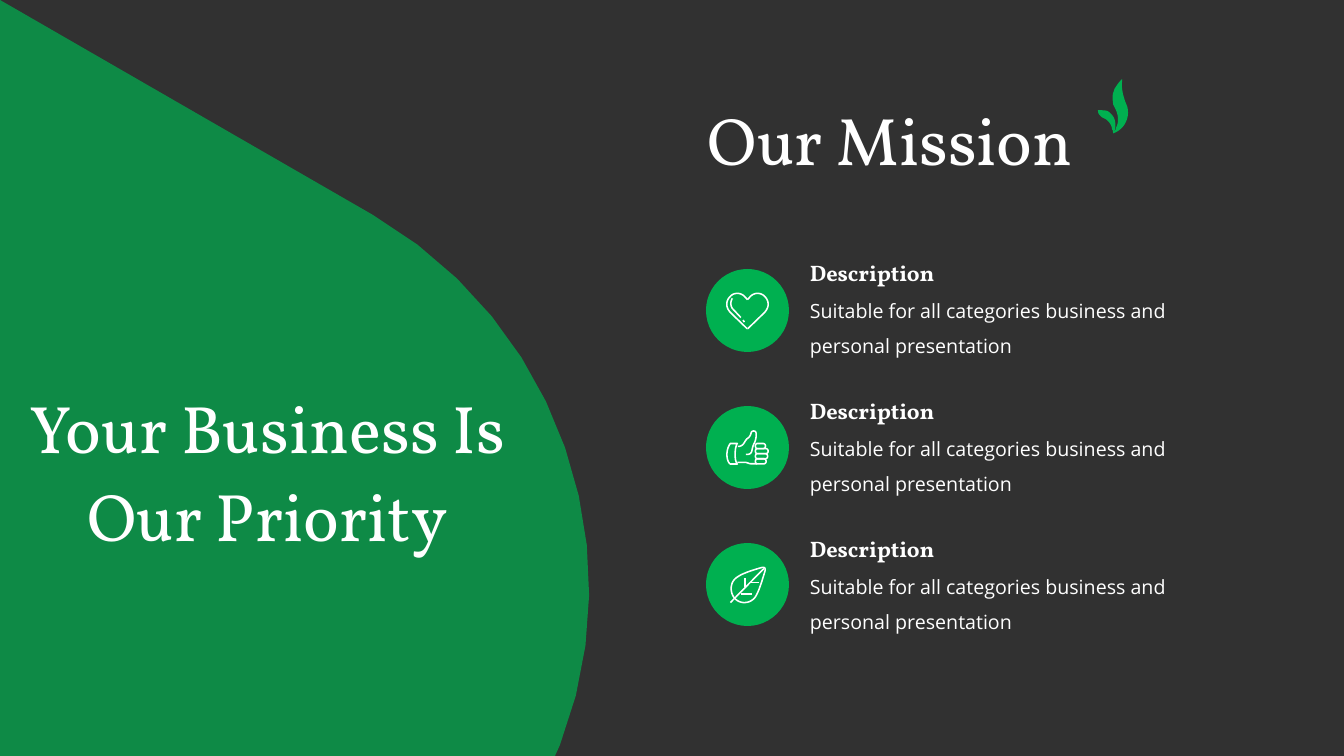
import pptx
import pptx.dml.color
import pptx.enum.shapes
import pptx.enum.text
import pptx.oxml
import pptx.oxml.ns
import pptx.util
from lxml import etree

RGBColor = pptx.dml.color.RGBColor
ALIGN = pptx.enum.text.PP_ALIGN

EMU_PER_PX = 914400 / 100.8
UNITS_PER_PX = 10  # outlines are drawn in tenths of a px
CURVE_STEPS = 12

CHARCOAL = RGBColor(0x31, 0x31, 0x31)
GREEN = RGBColor(0x00, 0xB0, 0x50)
WHITE = RGBColor(0xFF, 0xFF, 0xFF)
SERIF, SANS = "Vollkorn", "Open Sans"

HEADING = "Our Mission"
STATEMENT = "Your Business Is Our Priority"
BODY = "Suitable for all categories business and personal presentation"

# An outline is a list of contours: (closed, start point, segments).
# A segment of two numbers is a line, of six numbers a Bézier curve.
PANEL = [(True, (0, 0), [
    (0, 7560), (5550, 7560), (5600, 7450),
    (6360, 5500, 5600, 3240, 3730, 2150)])]

SPROUT = [
    (True, (0, 312), [
        (0, 350, 20, 365, 40, 383), (60, 393, 60, 393, 80, 403),
        (110, 423, 140, 464, 141, 504), (151, 514, 151, 524, 151, 544),
        (171, 514, 181, 474, 171, 423), (165, 380, 131, 343, 101, 323),
        (80, 312, 50, 312, 0, 312)]),
    (True, (242, 0), [
        (210, 30, 190, 60, 171, 91), (161, 101, 161, 121, 151, 141),
        (141, 191, 151, 222, 151, 252), (181, 312),
        (202, 363, 212, 433, 181, 484), (181, 504, 171, 514, 151, 544),
        (212, 524, 262, 474, 282, 423), (305, 370, 305, 320, 292, 272),
        (252, 181, 232, 91, 242, 20)])]

# Icons are drawn around the centre of their circle.
HEART_LEFT = [
    (-8, 181, -14, 172, -20, 166), (-166, 25),
    (-190, 0, -207, -30, -207, -61), (-207, -91, -195, -118, -176, -136),
    (-157, -160, -130, -171, -101, -171), (-70, -171, -45, -158, -25, -136),
    (0, -108)]
HEART_RIGHT = [tuple(-value if place % 2 == 0 else value
                     for place, value in enumerate(segment))
               for segment in HEART_LEFT]
HEART = [
    (False, (0, 181), HEART_LEFT),
    (False, (0, 181), HEART_RIGHT),
    (False, (-151, -121), [(-171, -90, -171, -50, -151, -20), (-66, 71)]),
    (False, (-45, 96), [(-30, 116)])]

FINGER_TOP, FINGER_HEIGHT, FINGER_LEFT = -40, 51, 80
FINGER_RIGHTS = [181, 207, 202, 187]


def finger(index, right):
    """Rounded bar for one folded finger of the thumb icon."""
    top = FINGER_TOP + index * FINGER_HEIGHT
    bottom = top + FINGER_HEIGHT
    return (True, (FINGER_LEFT + 18, top), [
        (right - 25, top), (right + 8, top, right + 8, bottom, right - 25, bottom),
        (FINGER_LEFT + 18, bottom),
        (FINGER_LEFT - 6, bottom, FINGER_LEFT - 6, top, FINGER_LEFT + 18, top)])


THUMB = [
    (True, (-101, -40), [
        (-171, -40), (-190, -15, -205, 25, -205, 70),
        (-205, 120, -190, 155, -171, 165), (-101, 165),
        (-115, 150, -123, 120, -123, 70), (-123, 20, -115, -20, -101, -40)]),
    (False, (-96, -10), [
        (-80, -10, -60, -15, -45, -30), (-30, -45, -20, -75, 0, -90),
        (25, -105, 33, -130, 38, -150), (45, -170, 80, -170, 85, -150),
        (92, -120, 85, -80, 70, -45), (60, -30, 50, 0, 45, 30),
        (38, 65, 15, 70, -15, 70)]),
    (False, (-100, 148), [(-30, 148), (0, 148, 10, 163, 40, 163), (98, 163)]),
] + [finger(index, right) for index, right in enumerate(FINGER_RIGHTS)]

LEAF = [
    (True, (146, -171), [
        (60, -145, -70, -110, -126, -55), (-175, -5, -175, 85, -126, 140),
        (-75, 195, 15, 195, 70, 136), (110, 90, 150, -50, 176, -136),
        (182, -165, 170, -175, 146, -171)]),
    (False, (-171, 181), [(165, -160)]),
    (False, (-25, -60), [(-25, 30)]),
    (False, (-65, 96), [(50, 96)]),
    (False, (40, -20), [(111, -20)])]

MISSIONS = [("Description", BODY, HEART),
            ("Description", BODY, THUMB),
            ("Description", BODY, LEAF)]

CIRCLE_LEFT, CIRCLE_TOP, CIRCLE_SIZE, CIRCLE_PITCH = 706, 269, 83, 137
TEXT_LEFT, LABEL_TOP, BODY_TOP, TEXT_PITCH = 800, 254, 283, 138


def px(length):
    return pptx.util.Emu(round(length * EMU_PER_PX))


def contour_points(start, segments):
    """Points along the segments, with curves split into short lines."""
    points = []
    x0, y0 = start
    for segment in segments:
        if len(segment) == 2:
            points.append(segment)
        else:
            x1, y1, x2, y2, x3, y3 = segment
            for step in range(1, CURVE_STEPS + 1):
                t = step / CURVE_STEPS
                u = 1 - t
                a, b, c, d = u ** 3, 3 * u * u * t, 3 * u * t * t, t ** 3
                points.append((a * x0 + b * x1 + c * x2 + d * x3,
                               a * y0 + b * y1 + c * y2 + d * y3))
        x0, y0 = segment[-2:]
    return points


def add_outline(slide, outline, left, top, fill=None, stroke=None):
    def place(point):
        return (px(left + point[0] / UNITS_PER_PX), px(top + point[1] / UNITS_PER_PX))

    builder = None
    for closed, start, segments in outline:
        if builder is None:
            builder = slide.shapes.build_freeform(*place(start), scale=1.0)
        else:
            builder.move_to(*place(start))
        points = [place(point) for point in contour_points(start, segments)]
        builder.add_line_segments(points, close=closed)
    shape = builder.convert_to_shape()
    shape.shadow.inherit = False
    if fill is None:
        shape.fill.background()
    else:
        shape.fill.solid()
        shape.fill.fore_color.rgb = fill
    if stroke is None:
        shape.line.fill.background()
    else:
        shape.line.color.rgb = stroke
        shape.line.width = pptx.util.Pt(1.1)
    return shape


def set_opacity(shape, percent):
    color = shape.fill._xPr.find(".//" + pptx.oxml.ns.qn("a:srgbClr"))
    alpha = etree.SubElement(color, pptx.oxml.ns.qn("a:alpha"))
    alpha.set("val", str(percent * 1000))


def add_text(slide, text, box, size, font, spacing=1.0, bold=False,
             align=ALIGN.LEFT, grow=False):
    frame = slide.shapes.add_textbox(*map(px, box)).text_frame
    frame.word_wrap = True
    frame.vertical_anchor = pptx.enum.text.MSO_ANCHOR.MIDDLE
    if grow:
        frame.auto_size = pptx.enum.text.MSO_AUTO_SIZE.SHAPE_TO_FIT_TEXT
    paragraph = frame.paragraphs[0]
    paragraph.alignment = align
    paragraph.line_spacing = spacing
    run = paragraph.add_run()
    run.text = text
    run.font.size = pptx.util.Pt(size)
    run.font.name = font
    run.font.bold = bold
    run.font.color.rgb = WHITE


def add_mission(slide, index, label, body, icon):
    top = CIRCLE_TOP + index * CIRCLE_PITCH
    circle = slide.shapes.add_shape(
        pptx.enum.shapes.MSO_SHAPE.OVAL,
        *map(px, (CIRCLE_LEFT, top, CIRCLE_SIZE, CIRCLE_SIZE)))
    circle.shadow.inherit = False
    circle.fill.solid()
    circle.fill.fore_color.rgb = GREEN
    circle.line.fill.background()
    radius = CIRCLE_SIZE / 2
    add_outline(slide, icon, CIRCLE_LEFT + radius, top + radius, stroke=WHITE)
    shift = index * TEXT_PITCH
    add_text(slide, body, (TEXT_LEFT, BODY_TOP + shift, 386, 78), 14, SANS,
             spacing=1.5, grow=True)
    add_text(slide, label, (TEXT_LEFT, LABEL_TOP + shift, 224, 37), 16, SERIF,
             bold=True, grow=True)


def main():
    presentation = pptx.Presentation()
    presentation.slide_width, presentation.slide_height = px(1344), px(756)
    slide = presentation.slides.add_slide(presentation.slide_layouts[6])
    slide.background.fill.solid()
    slide.background.fill.fore_color.rgb = CHARCOAL

    set_opacity(add_outline(slide, PANEL, 0, 0, fill=GREEN), 70)
    add_text(slide, HEADING, (698, 93, 600, 101), 48, SERIF, spacing=0.9)
    for index, (label, body, icon) in enumerate(MISSIONS):
        add_mission(slide, index, label, body, icon)
    add_outline(slide, SPROUT, 1098, 79, fill=GREEN)
    add_text(slide, STATEMENT, (7, 318, 521, 297), 48, SERIF, spacing=1.1,
             align=ALIGN.CENTER)
    presentation.save("out.pptx")


if __name__ == "__main__":
    main()
